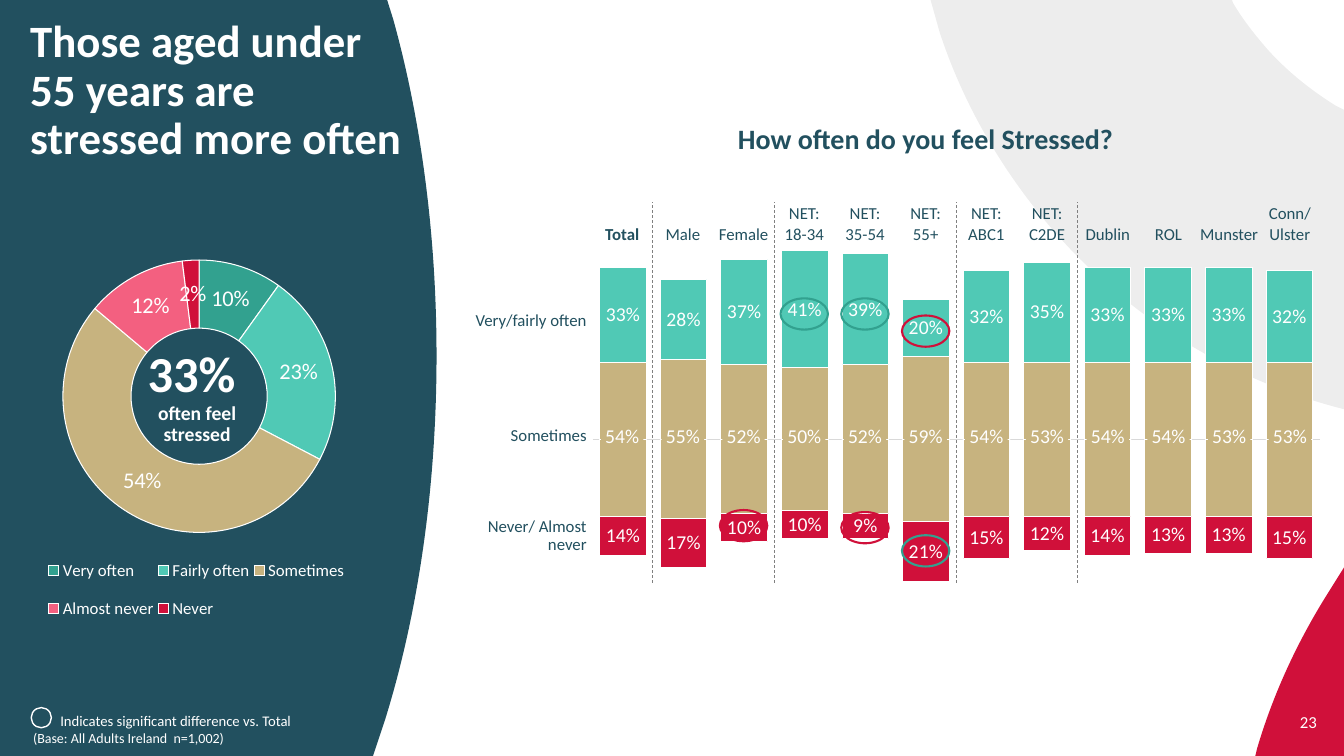
from dataclasses import dataclass

from lxml import etree
from pptx import Presentation
from pptx.chart.data import CategoryChartData
from pptx.dml.color import RGBColor
from pptx.enum.chart import XL_CHART_TYPE, XL_LABEL_POSITION, XL_LEGEND_POSITION, XL_TICK_LABEL_POSITION, XL_TICK_MARK
from pptx.enum.dml import MSO_LINE
from pptx.enum.shapes import MSO_CONNECTOR, MSO_SHAPE
from pptx.enum.text import MSO_ANCHOR, MSO_AUTO_SIZE, PP_ALIGN
from pptx.oxml.ns import qn
from pptx.util import Inches, Pt

LEFT, CENTER, RIGHT = PP_ALIGN.LEFT, PP_ALIGN.CENTER, PP_ALIGN.RIGHT
TOP, MIDDLE, BOTTOM = MSO_ANCHOR.TOP, MSO_ANCHOR.MIDDLE, MSO_ANCHOR.BOTTOM
RECTANGLE, OVAL = MSO_SHAPE.RECTANGLE, MSO_SHAPE.OVAL
STACKED, DOUGHNUT = XL_CHART_TYPE.COLUMN_STACKED, XL_CHART_TYPE.DOUGHNUT
NO_TABLE_STYLE = "{2D5ABB26-0587-4C30-8999-92F81FD0307C}"


@dataclass(frozen=True)
class Theme:
    font: str = "Calibri"
    navy: str = "22505F"
    red: str = "D0103A"
    green: str = "32A18F"
    teal: str = "50C9B5"
    sand: str = "C7B37F"
    pink: str = "F36080"
    white: str = "FFFFFF"
    black: str = "000000"
    divider: str = "808080"
    axis: str = "D9D9D9"
    title: float = 32
    headline: float = 36
    question: float = 20
    share: float = 16
    body: float = 14
    label: float = 12
    note: float = 10.5
    base: float = 10


THEME = Theme()
BAND_LEFT, BAND = 5.87, 0.602
GROUPS = ["Total", "Male", "Female", "NET:\n18-34", "NET:\n35-54", "NET:\n55+",
          "NET: ABC1", "NET: C2DE", "Dublin", "ROL", "Munster", "Conn/ Ulster"]
SOMETIMES = [54, 55, 52, 50, 52, 59, 54, 53, 54, 54, 53, 53]
HALF_SOMETIMES = [0.27, 0.28, 0.26, 0.25, 0.26, 0.29] + [0.27] * 6
NEVER = [0.14, 0.17, 0.1, 0.1, 0.09, 0.21, 0.15, 0.12, 0.14, 0.13, 0.13, 0.15]
OFTEN = [0.33, 0.28, 0.37, 0.41, 0.39, 0.2, 0.32, 0.35, 0.33, 0.33, 0.33, 0.32]
NONE_SHOWN = [0] * len(GROUPS)
FREQUENCIES = [("Very often", 0.1, THEME.green), ("Fairly often", 0.23, THEME.teal),
               ("Sometimes", 0.54, THEME.sand), ("Almost never", 0.12, THEME.pink),
               ("Never", 0.02, THEME.red)]
STACK = [([-half for half in HALF_SOMETIMES], THEME.sand, None),
         ([-share for share in NEVER], THEME.red, "#,##0%;#,##0%"),
         (NONE_SHOWN, THEME.red, None),
         (HALF_SOMETIMES, THEME.sand, None),
         (OFTEN, THEME.teal, "0%"),
         (NONE_SHOWN, THEME.teal, None)]
DIFFERENCES = [(3, 2.96, THEME.green), (4, 2.96, THEME.green), (5, 3.13, THEME.red),
               (2, 5.06, THEME.red), (4, 5.08, THEME.red), (5, 5.31, THEME.green)]
SWOOPS = [
    (THEME.red, None, [(13.33, 5.63), (13.33, 7.5), (12.45, 7.5), (12.47, 7.42),
                       (12.63, 6.88, 12.87, 6.36, 13.18, 5.87)]),
    (THEME.navy, None, [(0, 0), (3.84, 0), (3.9, 0.19), (4.17, 1.16, 4.33, 2.31, 4.33, 3.53),
                        (4.33, 4.87, 4.14, 6.11, 3.82, 7.14), (3.7, 7.5), (0, 7.5)]),
    (THEME.black, 7, [(9.23, 0), (12.22, 0), (12.23, 0.03), (12.33, 0.2, 12.45, 0.35, 12.58, 0.5),
                      (12.78, 0.72, 13.01, 0.9, 13.25, 1.05), (13.33, 1.09), (13.33, 4.06),
                      (13.29, 4.05), (12.22, 3.77, 11.23, 3.18, 10.45, 2.29),
                      (9.93, 1.69, 9.55, 1.02, 9.32, 0.32)]),
]


def rgb(value):
    return RGBColor.from_string(value)


def band_center(index):
    return BAND_LEFT + BAND * (index + 0.5)


def style_font(font, size, color, bold=False):
    font.name, font.size, font.bold = THEME.font, Pt(size), bold
    font.color.rgb = rgb(color)


def outline(line, color, width):
    line.color.rgb = rgb(color)
    line.width = Pt(width)


def write(frame, lines, color, align=LEFT, anchor=TOP, spacing=0.9, after=6, inset=None, wrap=True):
    frame.word_wrap, frame.vertical_anchor = wrap, anchor
    frame.auto_size = MSO_AUTO_SIZE.NONE
    if inset is not None:
        frame.margin_left = frame.margin_right = frame.margin_top = frame.margin_bottom = Inches(inset)
    for index, (text, size, bold) in enumerate(lines):
        paragraph = frame.add_paragraph() if index else frame.paragraphs[0]
        paragraph.alignment, paragraph.line_spacing = align, spacing
        paragraph.space_after = Pt(after if index == len(lines) - 1 else 0)
        run = paragraph.add_run()
        run.text = text
        style_font(run.font, size, color, bold)


def add_text(slide, box, lines, color, **layout):
    write(slide.shapes.add_textbox(*map(Inches, box)).text_frame, lines, color, **layout)


def add_label(slide, box, text, size, color, fill, align, wrap):
    label = slide.shapes.add_shape(RECTANGLE, *map(Inches, box))
    label.shadow.inherit = False
    label.fill.solid()
    label.fill.fore_color.rgb = rgb(fill)
    label.line.fill.background()
    write(label.text_frame, [(text, size, False)], color, align=align, anchor=MIDDLE, inset=0.04, wrap=wrap)


def add_ring(slide, box, color, width):
    ring = slide.shapes.add_shape(OVAL, *map(Inches, box))
    ring.shadow.inherit = False
    ring.fill.background()
    outline(ring.line, color, width)


def bend(swoop, steps):
    segments = iter(list(swoop._element.spPr.iter(qn("a:lnTo"))))
    for step in steps[1:]:
        first = next(segments)
        if len(step) == 6:
            curve = etree.Element(qn("a:cubicBezTo"))
            first.addprevious(curve)
            for segment in (first, next(segments), next(segments)):
                curve.append(segment[0])
                segment.getparent().remove(segment)


def add_swoop(slide, color, opacity, steps):
    corners = [(Inches(step[n]), Inches(step[n + 1])) for step in steps for n in range(0, len(step), 2)]
    builder = slide.shapes.build_freeform(*corners[0], scale=1.0)
    builder.add_line_segments(corners[1:], close=True)
    swoop = builder.convert_to_shape()
    bend(swoop, steps)
    swoop.shadow.inherit = False
    swoop.fill.solid()
    swoop.fill.fore_color.rgb = rgb(color)
    swoop.line.fill.background()
    if opacity:
        tint = next(swoop._element.spPr.iter(qn("a:srgbClr")))
        etree.SubElement(tint, qn("a:alpha")).set("val", str(opacity * 1000))


def add_divider(slide, x):
    divider = slide.shapes.add_connector(MSO_CONNECTOR.STRAIGHT, Inches(x), Inches(5.78), Inches(x), Inches(2))
    outline(divider.line, THEME.divider, 0.5)
    divider.line.dash_style = MSO_LINE.DASH
    etree.SubElement(divider._element.spPr, qn("a:effectLst"))


def place(parent, index, bounds, inner=False):
    for old in parent.findall(qn("c:layout")):
        parent.remove(old)
    layout = etree.Element(qn("c:layout"))
    manual = etree.SubElement(layout, qn("c:manualLayout"))
    settings = [("layoutTarget", "inner")] if inner else []
    settings += [("xMode", "edge"), ("yMode", "edge"), *zip("xywh", map(str, bounds))]
    for tag, value in settings:
        etree.SubElement(manual, qn(f"c:{tag}")).set("val", value)
    parent.insert(index, layout)


def add_chart(slide, kind, box, categories, series, plot_bounds):
    data = CategoryChartData(number_format="0%")
    data.categories = categories
    for number, values in enumerate(series, 1):
        data.add_series(f"Series {number}", values)
    chart = slide.shapes.add_chart(kind, *map(Inches, box), data).chart
    chart.has_title = chart.has_legend = False
    style_font(chart.font, THEME.body, THEME.black)
    place(chart._chartSpace.chart.plotArea, 0, plot_bounds, inner=True)
    return chart


def paint(format_, color):
    format_.fill.solid()
    format_.fill.fore_color.rgb = rgb(color)
    outline(format_.line, THEME.white, 0.75)


def show_values(series, size, number_format):
    labels = series.data_labels
    labels.show_value = True
    labels.number_format, labels.number_format_is_linked = number_format, False
    style_font(labels.font, size, THEME.white)
    return labels


def add_doughnut(slide):
    names, shares, colors = zip(*FREQUENCIES)
    chart = add_chart(slide, DOUGHNUT, (0, 2.42, 4.38, 3.9), names, [shares], (0.142, 0.041, 0.618, 0.693))
    ring = chart.plots[0].series[0]
    for index, color in enumerate(colors):
        paint(ring.points[index].format, color)
    show_values(ring, THEME.share, "0%")
    chart.has_legend = True
    chart.legend.position, chart.legend.include_in_layout = XL_LEGEND_POSITION.BOTTOM, False
    style_font(chart.legend.font, THEME.label, THEME.white)
    place(chart.legend._element, 1, (0.1, 0.76, 0.69, 0.24))


def add_stacked_columns(slide):
    chart = add_chart(slide, STACKED, (5.73, 2.01, 7.51, 4.14), [str(n) for n in range(1, len(GROUPS) + 1)],
                      [values for values, _, _ in STACK], (0.02, 0.02, 0.96, 0.957))
    plot = chart.plots[0]
    plot.gap_width, plot.overlap, plot.vary_by_categories = 30, 100, False
    for series, (_, color, number_format) in zip(plot.series, STACK):
        paint(series.format, color)
        series.invert_if_negative = False
        if number_format:
            show_values(series, THEME.body, number_format).position = XL_LABEL_POSITION.CENTER
    groups, shares = chart.category_axis, chart.value_axis
    groups.tick_label_position = XL_TICK_LABEL_POSITION.NONE
    groups.major_tick_mark = groups.minor_tick_mark = XL_TICK_MARK.NONE
    outline(groups.format.line, THEME.axis, 0.75)
    shares.visible = shares.has_major_gridlines = False
    shares.minimum_scale, shares.maximum_scale = -0.6, 0.8


def add_group_header(slide):
    header = slide.shapes.add_table(1, len(GROUPS), Inches(BAND_LEFT), Inches(2.01),
                                    Inches(BAND * len(GROUPS)), Inches(0.4)).table
    header.first_row = header.horz_banding = False
    header._tbl.tblPr.find(qn("a:tableStyleId")).text = NO_TABLE_STYLE
    for index, group in enumerate(GROUPS):
        header.columns[index].width = Inches(BAND)
        cell = header.cell(0, index)
        cell.fill.background()
        cell.vertical_anchor = BOTTOM
        cell.margin_left = cell.margin_right = cell.margin_top = Inches(0.01)
        cell.margin_bottom = 0
        for number, line in enumerate(group.split("\n")):
            paragraph = cell.text_frame.add_paragraph() if number else cell.text_frame.paragraphs[0]
            paragraph.alignment = CENTER
            run = paragraph.add_run()
            run.text = line
            style_font(run.font, THEME.label, THEME.navy, index == 0)


def add_title(slide):
    title = slide.shapes.title
    slide.shapes._spTree.append(title._element)
    title.left, title.top, title.width, title.height = map(Inches, (0.2, 0.14, 3.93, 1.12))
    write(title.text_frame, [("Those aged under 55 years are stressed more often", THEME.title, True)], THEME.white)


def main():
    deck = Presentation()
    deck.slide_width, deck.slide_height = Inches(13.33), Inches(7.5)
    slide = deck.slides.add_slide(deck.slide_layouts[5])
    for swoop in SWOOPS:
        add_swoop(slide, *swoop)
    add_title(slide)
    add_text(slide, (12.53, 6.97, 0.63, 0.4), [("23", THEME.label, False)], THEME.white, align=RIGHT, anchor=MIDDLE)
    add_text(slide, (0.23, 7.06, 2.56, 0.4), [("(Base: All Adults Ireland  n=1,002)", THEME.base, False)],
             THEME.white, anchor=BOTTOM)
    add_doughnut(slide)
    add_text(slide, (1.28, 3.6, 1.35, 0.68), [("33% ", THEME.headline, True), ("often feel stressed", THEME.body, True)],
             THEME.white, align=CENTER, anchor=MIDDLE)
    add_stacked_columns(slide)
    for text, top, height in (("Very/fairly often", 3.06, 0.26), ("Never/ Almost never", 5.1, 0.44)):
        add_text(slide, (4.43, top, 1.43, height), [(text, THEME.label, False)], THEME.navy,
                 align=RIGHT, anchor=MIDDLE, inset=0.04)
    add_label(slide, (4.43, 4.2, 1.43, 0.26), "Sometimes", THEME.label, THEME.navy, THEME.white, RIGHT, True)
    add_group_header(slide)
    for index, share in enumerate(SOMETIMES):
        add_label(slide, (band_center(index) - 0.21, 4.19, 0.42, 0.29), f"{share}%", THEME.body,
                  THEME.white, THEME.sand, CENTER, False)
    add_ring(slide, (0.31, 7.02, 0.2, 0.2), THEME.white, 1)
    add_text(slide, (0.5, 6.91, 2.56, 0.35), [("Indicates significant difference vs. Total", THEME.note, False)],
             THEME.white, spacing=Pt(20), after=0, wrap=False)
    add_text(slide, (6.84, 1.16, 4.68, 0.44), [("How often do you feel Stressed?", THEME.question, True)],
             THEME.navy, align=CENTER, spacing=1.0, after=0)
    for groups_before in (1, 3, 6, 8):
        add_divider(slide, BAND_LEFT + BAND * groups_before)
    for index, top, color in DIFFERENCES:
        add_ring(slide, (band_center(index) - 0.235, top, 0.47, 0.31), color, 1.5)
    deck.save("out.pptx")


if __name__ == "__main__":
    main()
